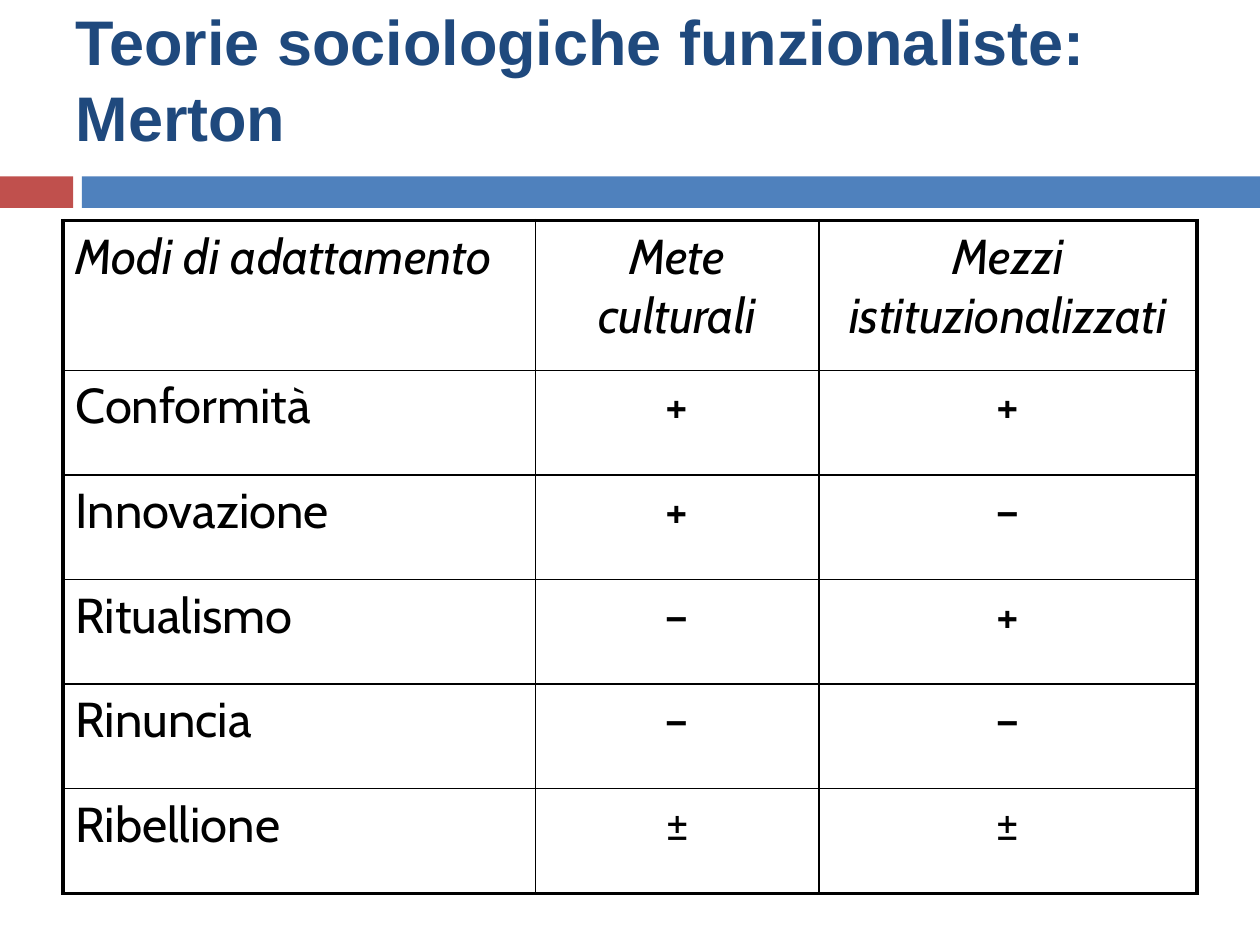
"""Build a slide with Merton's table of modes of adaptation."""
import pptx
import pptx.dml.color
import pptx.enum.shapes
import pptx.enum.text
import pptx.oxml
import pptx.oxml.ns
import pptx.util

Inches = pptx.util.Inches
Pt = pptx.util.Pt
Align = pptx.enum.text.PP_ALIGN

ROWS = [
    ("Modi di adattamento", "Mete culturali", "Mezzi istituzionalizzati"),
    ("Conformità", "+", "+"),
    ("Innovazione", "+", "–"),
    ("Ritualismo", "–", "+"),
    ("Rinuncia", "–", "–"),
    ("Ribellione", "±", "±"),
]
WIDTHS = [3.75, 2.25, 3]
HEIGHTS = [1.19] + [0.83] * 5


def color(code):
    return pptx.dml.color.RGBColor.from_string(code)


class Deck:
    ink = "000000"
    thin, thick = 1, 2.25

    def __init__(self, slide):
        self.slide = slide

    def style(self, par, face, size, code, bold=False, slant=False):
        font = par.font
        font.name, font.size = face, Pt(size)
        font.bold, font.italic = bold, slant
        font.color.rgb = color(code)

    def title(self, text, left, top, width, height):
        shape = self.slide.shapes.title
        shape.left, shape.top = Inches(left), Inches(top)
        shape.width, shape.height = Inches(width), Inches(height)
        frame = shape.text_frame
        frame.text = text
        frame.auto_size = pptx.enum.text.MSO_AUTO_SIZE.NONE
        frame.vertical_anchor = pptx.enum.text.MSO_ANCHOR.BOTTOM
        frame.margin_top, frame.margin_bottom = 0, Inches(0.33)
        par = frame.paragraphs[0]
        par.alignment = Align.LEFT
        self.style(par, "Arial", 36, "1F497D", bold=True)

    def bar(self, left, width, code):
        shape = self.slide.shapes.add_shape(
            pptx.enum.shapes.MSO_SHAPE.RECTANGLE,
            Inches(left), Inches(1.4), Inches(width), Inches(0.25))
        shape.shadow.inherit = False
        shape.fill.solid()
        shape.fill.fore_color.rgb = color(code)
        shape.line.fill.background()

    def border(self, cell, side, width):
        space = pptx.oxml.ns.nsdecls("a")
        line = pptx.oxml.parse_xml(
            f'<a:ln{side} {space} w="{Pt(width)}"><a:solidFill>'
            f'<a:srgbClr val="{self.ink}"/></a:solidFill></a:ln{side}>')
        cell._tc.get_or_add_tcPr().append(line)

    def cell(self, cell, text, head, first, edges):
        cell.text = text
        par = cell.text_frame.paragraphs[0]
        par.alignment = Align.LEFT if first else Align.CENTER
        self.style(par, "Cabin", 28, self.ink, slant=head)
        for side, outer in edges.items():
            self.border(cell, side, self.thick if outer else self.thin)
        cell.fill.background()

    def table(self, rows, widths, heights, left, top):
        grid = self.slide.shapes.add_table(
            len(rows), len(widths), Inches(left), Inches(top),
            Inches(sum(widths)), Inches(sum(heights))).table
        grid.first_row = grid.horz_banding = False
        for col, width in zip(grid.columns, widths):
            col.width = Inches(width)
        for row, height in zip(grid.rows, heights):
            row.height = Inches(height)
        for y, row in enumerate(rows):
            for x, text in enumerate(row):
                edges = {"L": x == 0, "R": x == len(row) - 1,
                         "T": y == 0, "B": y == len(rows) - 1}
                self.cell(grid.cell(y, x), text, y == 0, x == 0, edges)


def main():
    show = pptx.Presentation()
    show.slide_width, show.slide_height = Inches(10), Inches(7.5)
    deck = Deck(show.slides.add_slide(show.slide_layouts[5]))
    deck.bar(0, 0.58, "C0504D")
    deck.bar(0.65, 9.35, "4F81BD")
    deck.title("Teorie sociologiche funzionaliste: Merton", 0.5, 0.3, 9, 1.25)
    deck.table(ROWS, WIDTHS, HEIGHTS, 0.5, 1.75)
    show.save("out.pptx")


if __name__ == "__main__":
    main()
